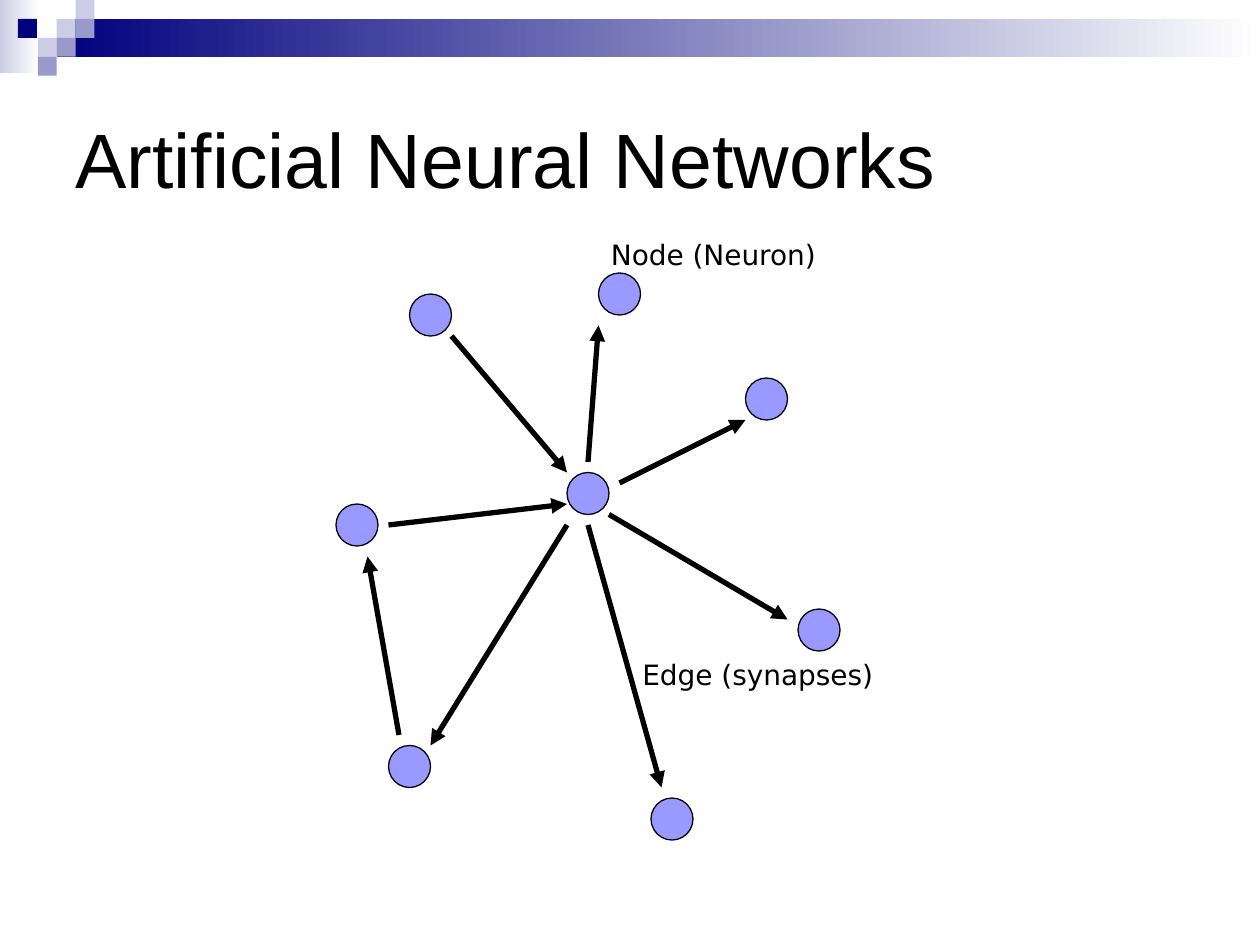
from dataclasses import dataclass
from typing import NamedTuple

import pptx
import pptx.dml.color
import pptx.enum.shapes
import pptx.enum.text
import pptx.oxml
import pptx.oxml.ns
import pptx.util

Color = pptx.dml.color.RGBColor.from_string
Inches = pptx.util.Inches
Preset = pptx.enum.shapes.MSO_SHAPE
Anchor = pptx.enum.text.MSO_ANCHOR


@dataclass(frozen=True)
class Theme:
    navy: str = "00007D"
    mid: str = "9999CC"
    pale: str = "CCCCE6"
    white: str = "FFFFFF"
    ink: str = "000000"
    node: str = "9999FF"
    title_font: str = "Arial"
    label_font: str = "DejaVu Sans"
    title_size: float = 44
    label_size: float = 16
    outline: float = 0.75
    edge: float = 3


class Box(NamedTuple):
    left: float
    top: float
    width: float
    height: float

    def scaled(self, unit: float) -> list:
        return [Inches(length * unit) for length in self]


class Tile(NamedTuple):
    column: float
    row: float
    color: str


class Node(NamedTuple):
    column: float
    row: float


class Edge(NamedTuple):
    start: tuple
    end: tuple


class Label(NamedTuple):
    text: str
    box: Box


THEME = Theme()
TILE = 0.15      # inches per header tile
CELL = 1 / 12    # inches per cell of the network grid
NODE_CELLS = 4

TILES = [
    Tile(3, 1, THEME.pale),
    Tile(4, 0, THEME.pale),
    Tile(4, 1, THEME.mid),
    Tile(2, 2, THEME.pale),
    Tile(0.95, 1, THEME.navy),
    Tile(3, 2, THEME.mid),
    Tile(2, 3, THEME.mid),
]
NODES = [
    Node(57, 26), Node(39, 28), Node(76, 58), Node(71, 36),
    Node(54, 45), Node(62, 76), Node(32, 48), Node(37, 71),
]
EDGES = [
    Edge((43, 32), (54, 45)),
    Edge((37, 50), (54, 48)),
    Edge((56, 44), (57, 31)),
    Edge((59, 46), (71, 40)),
    Edge((58, 49), (75, 59)),
    Edge((56, 50), (63, 75)),
    Edge((54, 50), (41, 71)),
    Edge((38, 70), (35, 53)),
]
LABELS = [
    Label("Node (Neuron)", Box(57, 22, 26, 4.4)),
    Label("Edge (synapses)", Box(60, 62, 32, 4.4)),
]


def add_preset(slide, preset, box: Box, unit: float):
    shape = slide.shapes.add_shape(preset, *box.scaled(unit))
    shape.shadow.inherit = False
    shape.line.fill.background()
    return shape


def add_fade(slide, box: Box, color: str) -> None:
    """Draw a band that fades to white from left to right."""
    fill = add_preset(slide, Preset.RECTANGLE, box, TILE).fill
    fill.gradient()
    fill.gradient_angle = 0
    for stop, stop_color in zip(fill.gradient_stops, (color, THEME.white)):
        stop.color.rgb = Color(stop_color)


def add_tile(slide, tile: Tile) -> None:
    square = add_preset(slide, Preset.RECTANGLE, Box(tile.column, tile.row, 1, 1), TILE)
    square.fill.solid()
    square.fill.fore_color.rgb = Color(tile.color)


def add_node(slide, node: Node) -> None:
    neuron = add_preset(slide, Preset.OVAL, Box(*node, NODE_CELLS, NODE_CELLS), CELL)
    neuron.fill.solid()
    neuron.fill.fore_color.rgb = Color(THEME.node)
    neuron.line.color.rgb = Color(THEME.ink)
    neuron.line.width = pptx.util.Pt(THEME.outline)


def add_edge(slide, edge: Edge) -> None:
    ends = [Inches(cells * CELL) for cells in (*edge.start, *edge.end)]
    synapse = slide.shapes.add_connector(pptx.enum.shapes.MSO_CONNECTOR.STRAIGHT, *ends)
    synapse.line.color.rgb = Color(THEME.ink)
    synapse.line.width = pptx.util.Pt(THEME.edge)
    arrowhead = pptx.oxml.parse_xml(
        f'<a:tailEnd {pptx.oxml.ns.nsdecls("a")} type="triangle"/>')
    synapse.line._get_or_add_ln().append(arrowhead)
    no_shadow = pptx.oxml.parse_xml(f'<a:effectLst {pptx.oxml.ns.nsdecls("a")}/>')
    synapse._element.spPr.append(no_shadow)


def add_text(slide, text: str, box: Box, *, unit: float, font: str, size: float,
             anchor=Anchor.TOP) -> None:
    frame = slide.shapes.add_textbox(*box.scaled(unit)).text_frame
    frame.word_wrap = True
    frame.vertical_anchor = anchor
    run = frame.paragraphs[0].add_run()
    run.text = text
    run.font.name = font
    run.font.size = pptx.util.Pt(size)
    run.font.color.rgb = Color(THEME.ink)


def main() -> None:
    deck = pptx.Presentation()
    deck.slide_width, deck.slide_height = Inches(10), Inches(7.5)
    slide = deck.slides.add_slide(deck.slide_layouts[6])

    add_fade(slide, Box(0, 0, 2.05, 3.85), THEME.pale)
    add_fade(slide, Box(3, 1, 10 / TILE - 3, 2), THEME.navy)
    for tile in TILES:
        add_tile(slide, tile)

    add_text(slide, "Artificial Neural Networks", Box(0.5, 0.5, 9, 1.5), unit=1,
             font=THEME.title_font, size=THEME.title_size, anchor=Anchor.MIDDLE)

    for node in NODES:
        add_node(slide, node)
    for edge in EDGES:
        add_edge(slide, edge)
    for label in LABELS:
        add_text(slide, label.text, label.box, unit=CELL,
                 font=THEME.label_font, size=THEME.label_size)

    deck.save("out.pptx")


if __name__ == "__main__":
    main()
